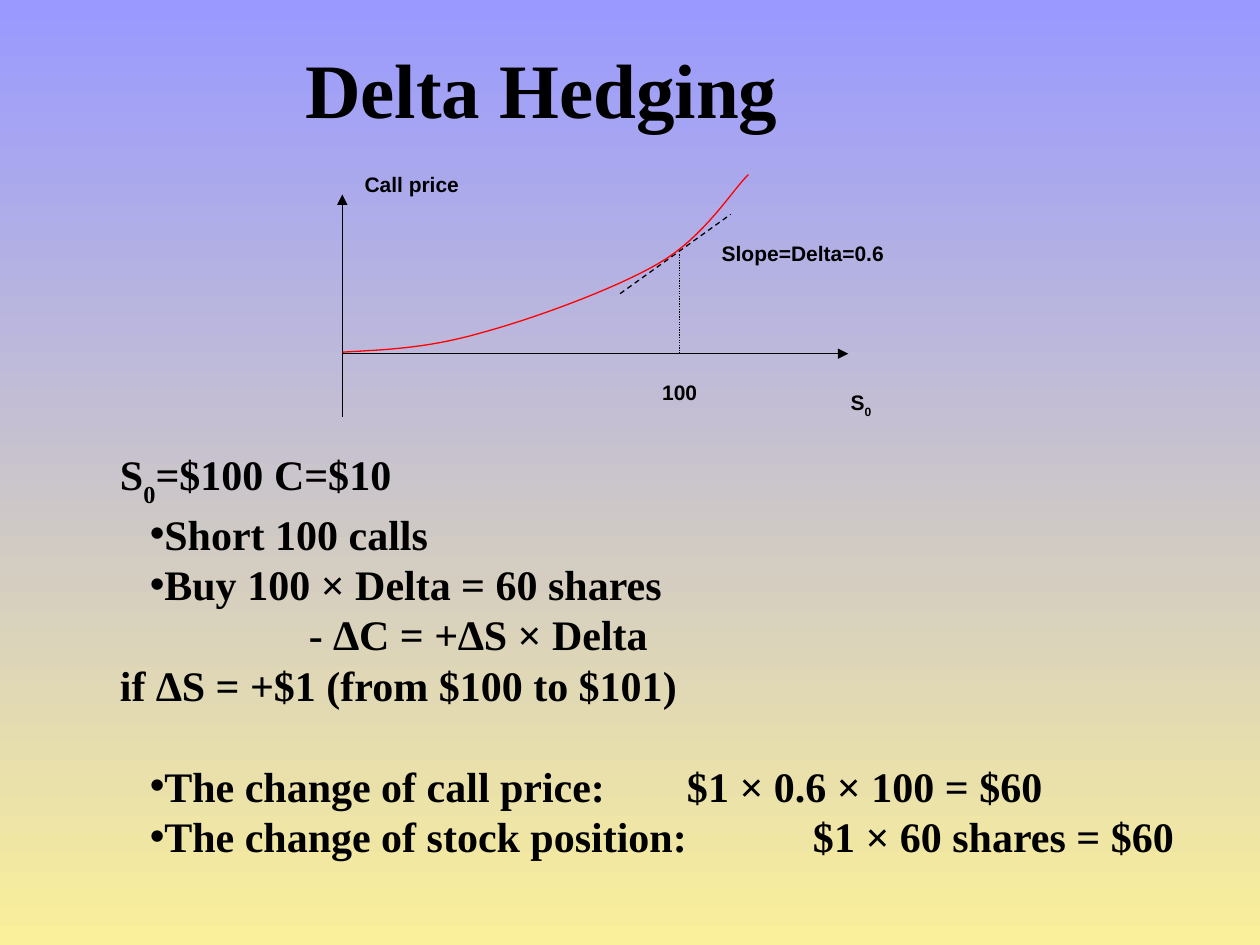
"""Build the Delta Hedging slide: a call price curve above a worked hedge."""
from lxml.etree import SubElement
from pptx import Presentation
from pptx.dml.color import RGBColor
from pptx.enum.dml import MSO_LINE_DASH_STYLE as DASH
from pptx.enum.shapes import MSO_CONNECTOR
from pptx.enum.text import MSO_AUTO_SIZE
from pptx.oxml.ns import qn
from pptx.util import Cm, Pt

BLACK = RGBColor(0, 0, 0)
RED = RGBColor(0xFF, 0, 0)
SKY = RGBColor(0x99, 0x99, 0xFF)
SAND = RGBColor(0xFA, 0xEF, 0x9A)
SANS, SERIF = "Arial", "Times New Roman"

prs = Presentation()
prs.slide_width, prs.slide_height = Cm(25.4), Cm(19.05)
slide = prs.slides.add_slide(prs.slide_layouts[6])

backdrop = slide.background.fill
backdrop.gradient()
backdrop.gradient_angle = 270
for stop, color, position in zip(backdrop.gradient_stops, (SKY, SAND), (0, 1)):
    stop.color.rgb = color
    stop.position = position


def add_runs(paragraph, pieces, font, size):
    for piece in pieces:
        run = paragraph.add_run()
        run.text = piece
        run.font.name, run.font.size = font, Pt(size)
        run.font.bold = True
        run.font.color.rgb = BLACK
        if piece == "0":
            run.font._element.set("baseline", "-30000")


def add_frame(left, top, width, height, wrap=True):
    box = slide.shapes.add_textbox(Cm(left), Cm(top), Cm(width), Cm(height))
    frame = box.text_frame
    frame.word_wrap = wrap
    frame.auto_size = MSO_AUTO_SIZE.SHAPE_TO_FIT_TEXT
    return frame


axis_x, axis_y, spot_x = 6.9, 7.13, 13.7
strokes = [
    (axis_x, 8.41, axis_x, 3.92, None),
    (axis_x, axis_y, 17.1, axis_y, None),
    (12.5, 5.92, 14.73, 4.32, DASH.DASH),
    (spot_x, 5.13, spot_x, axis_y, DASH.ROUND_DOT),
]
for x1, y1, x2, y2, dash in strokes:
    stroke = slide.shapes.add_connector(
        MSO_CONNECTOR.STRAIGHT, Cm(x1), Cm(y1), Cm(x2), Cm(y2))
    stroke.line.color.rgb = BLACK
    stroke.line.width = Pt(0.75)
    if dash:
        stroke.line.dash_style = dash
    else:
        SubElement(stroke.line._get_or_add_ln(), qn("a:tailEnd"), type="triangle")
    SubElement(stroke._element.spPr, qn("a:effectLst"))

knots = [(6.91, 7.1), (7.75, 7.05), (8.56, 7.03), (9.63, 6.73), (10.69, 6.45),
         (12.37, 5.84), (13.28, 5.31), (14.2, 4.78), (14.78, 3.81), (15.09, 3.52)]
steps = 16
curve_points = []
for first in range(0, len(knots) - 1, 3):
    for step in range(1, steps + 1):
        t = step / steps
        weights = ((1 - t) ** 3, 3 * t * (1 - t) ** 2, 3 * t ** 2 * (1 - t), t ** 3)
        segment = knots[first:first + 4]
        curve_points.append(tuple(
            Cm(sum(w * knot[axis] for w, knot in zip(weights, segment)))
            for axis in (0, 1)))
builder = slide.shapes.build_freeform(Cm(knots[0][0]), Cm(knots[0][1]))
builder.add_line_segments(curve_points, close=False)
price_curve = builder.convert_to_shape()
price_curve.shadow.inherit = False
price_curve.fill.background()
price_curve.line.color.rgb = RED
price_curve.line.width = Pt(0.75)

captions = [
    (["Slope=Delta=0.6"], SANS, 12, (14.3, 4.72, 3.81, 0.76, False)),
    (["S", "0"], SANS, 12, (16.9, 7.72, 0.99, 0.79)),
    (["Call price"], SANS, 12, (7.1, 3.33, 2.44, 0.76)),
    (["100"], SANS, 12, (13.1, 7.52, 1.22, 0.76, False)),
    (["Delta Hedging"], SERIF, 44, (5.9, 0.72, 11.05, 2.13)),
]
for pieces, font, size, place in captions:
    add_runs(add_frame(*place).paragraphs[0], pieces, font, size)

hedge_steps = [
    (["S", "0", "=$100 C=$10"], False, 0),
    (["Short 100 calls"], True, 0),
    (["Buy 100 × Delta = 60 shares"], True, 0),
    (["\t\t\t- ∆C = +∆S × Delta"], False, 0),
    (["if ∆S = +$1 (from $100 to $101)"], False, 0),
    (["The change of call price: \t$1 × 0.6 × 100 = $60"], True, 28.8),
    (["The change of stock position: \t$1 × 60 shares = $60"], True, 0),
]
body = add_frame(0.9, 8.92, 23.6, 9.37)
for index, (pieces, bulleted, gap) in enumerate(hedge_steps):
    paragraph = body.add_paragraph() if index else body.paragraphs[0]
    paragraph.space_before = Pt(gap)
    properties = paragraph._p.get_or_add_pPr()
    properties.set("marL", "0")
    properties.set("indent", str(Cm(1.87 if bulleted else 1.27)))
    if bulleted:
        SubElement(properties, qn("a:buFont"), typeface=SANS)
        SubElement(properties, qn("a:buChar"), char="•")
    tab_stops = SubElement(properties, qn("a:tabLst"))
    for column in range(1, 7):
        SubElement(tab_stops, qn("a:tab"), pos=str(Cm(2.54 * column)), algn="l")
    add_runs(paragraph, pieces, SERIF, 24)

prs.save("out.pptx")
